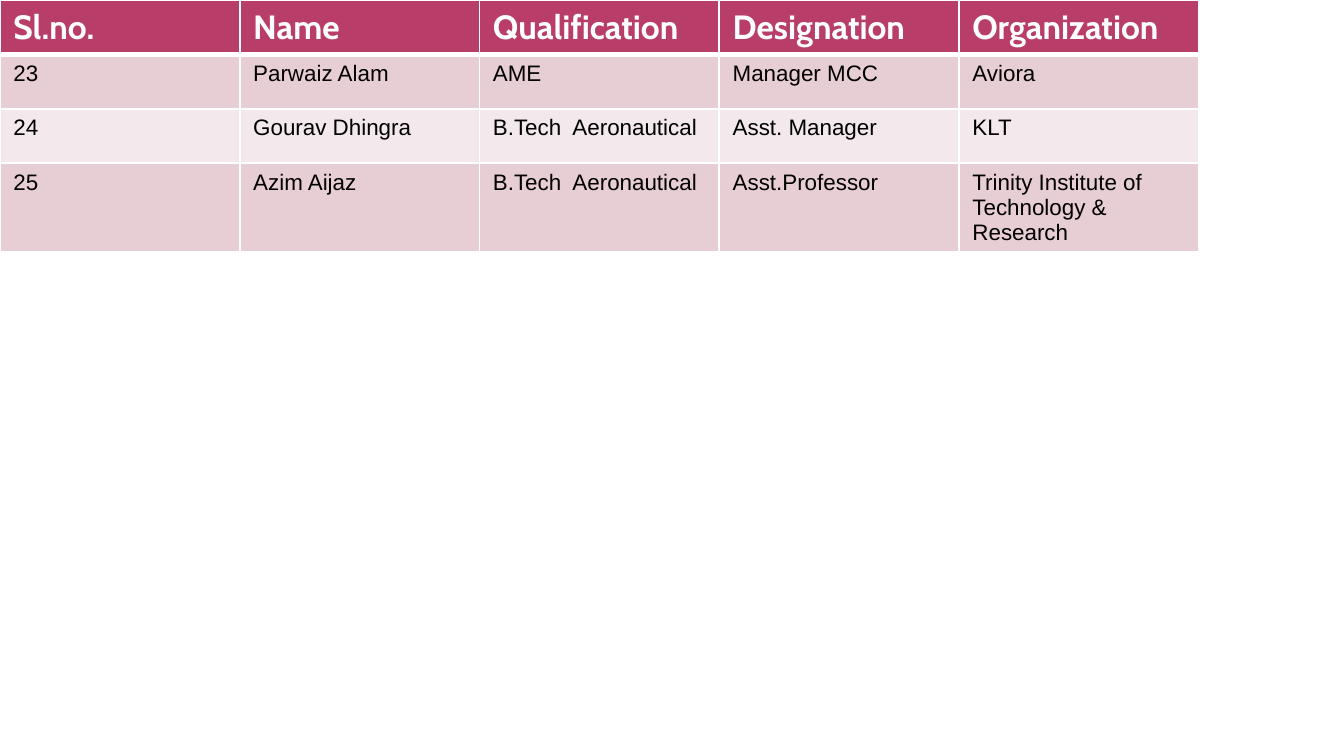
"""Build a slide with a table of staff members."""
from lxml import etree
from pptx import Presentation
from pptx.dml.color import RGBColor
from pptx.oxml.ns import qn
from pptx.util import Inches, Pt

WHITE, BLACK = "FFFFFF", "000000"
HEAD, DARK, LIGHT = "B83D68", "E6CED4", "F3E8EB"


def tint(hue):
    return RGBColor.from_string(hue)


def write(cell, text, size=12, font="Arial", color=BLACK, bold=False):
    run = cell.text_frame.paragraphs[0].add_run()
    run.text = text
    run.font.size = Pt(size)
    run.font.name = font
    run.font.bold = bold
    run.font.color.rgb = tint(color)


rows = [
    ["Sl.no.", "Name", "Qualification", "Designation", "Organization"],
    ["23", "Parwaiz Alam", "AME", "Manager MCC", "Aviora"],
    ["24", "Gourav Dhingra", "B.Tech  Aeronautical", "Asst. Manager", "KLT"],
    ["25", "Azim Aijaz", "B.Tech  Aeronautical", "Asst.Professor",
     "Trinity Institute of Technology & Research"],
]
fills = [HEAD, DARK, LIGHT, DARK]

deck = Presentation()
deck.slide_width = Inches(10)
deck.slide_height = Inches(10 * 9 / 16)
slide = deck.slides.add_slide(deck.slide_layouts[6])

frame = slide.shapes.add_table(
    len(rows), len(rows[0]), Inches(0), Inches(0), Inches(8.92), Inches(1.62))
table = frame.table

for r, texts in enumerate(rows):
    for c, text in enumerate(texts):
        cell = table.cell(r, c)
        if r == 0:
            write(cell, text, size=18, font="Cabin", color=WHITE, bold=True)
        else:
            write(cell, text)
        props = cell._tc.get_or_add_tcPr()
        for side in "LRTB":
            thick = (r, side) in [(0, "B"), (1, "T")]
            line = etree.SubElement(
                props, qn(f"a:ln{side}"), w=str(Pt(3 if thick else 1)))
            paint = etree.SubElement(line, qn("a:solidFill"))
            etree.SubElement(paint, qn("a:srgbClr"), val=WHITE)
        cell.fill.solid()
        cell.fill.fore_color.rgb = tint(fills[r])

deck.save("out.pptx")
